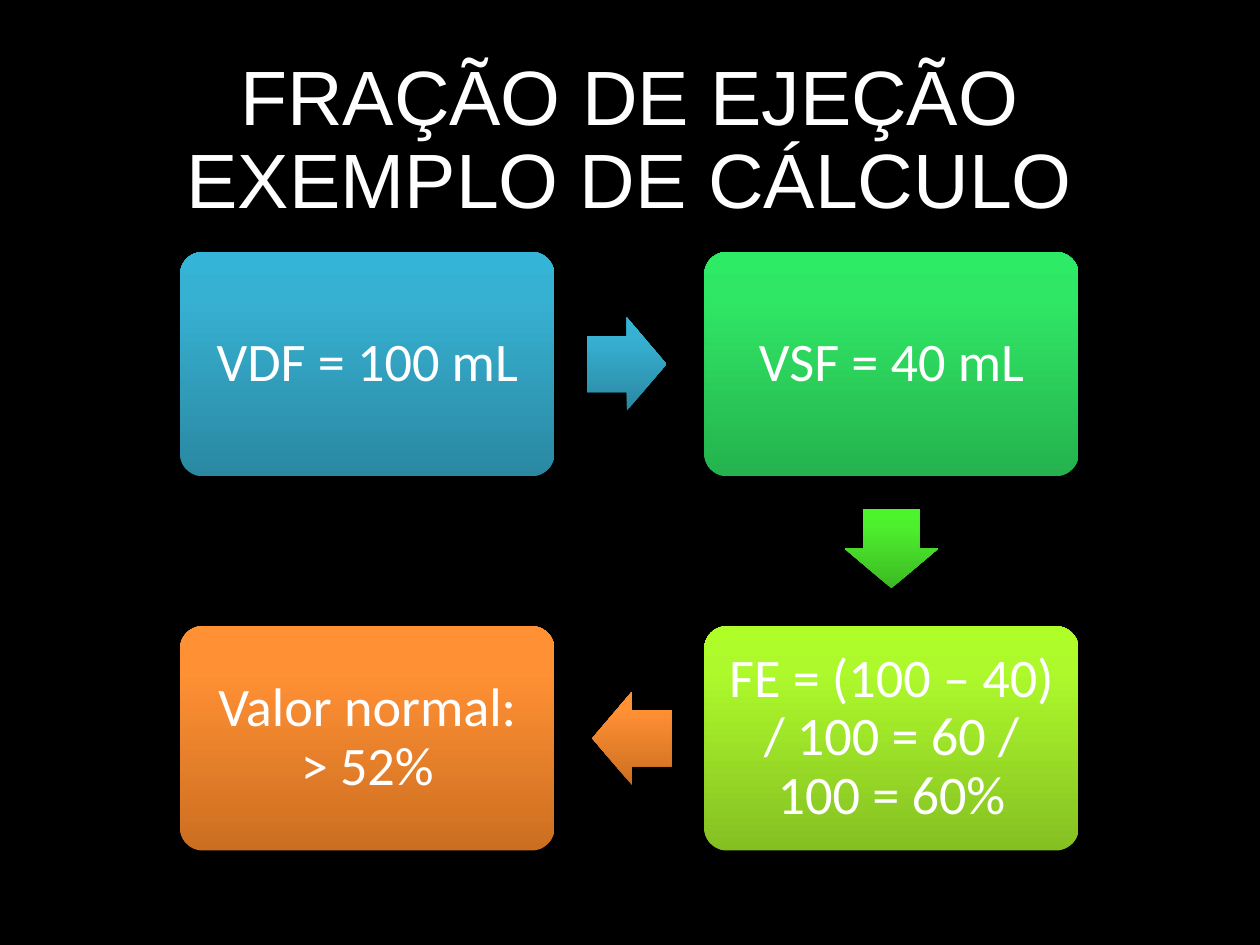
from lxml import etree
from pptx import Presentation
from pptx.dml.color import RGBColor
from pptx.enum.shapes import MSO_SHAPE
from pptx.enum.text import MSO_ANCHOR, PP_ALIGN
from pptx.oxml import parse_xml
from pptx.oxml.ns import nsdecls
from pptx.util import Inches, Pt

ROUNDED, ARROW = MSO_SHAPE.ROUNDED_RECTANGLE, MSO_SHAPE.RIGHT_ARROW
MIDDLE, CENTER = MSO_ANCHOR.MIDDLE, PP_ALIGN.CENTER

TITLE = "FRAÇÃO DE EJEÇÃO\nEXEMPLO DE CÁLCULO"
# text, (column, row), colour name
STEPS = [
    ("VDF = 100 mL", (0, 0), "blue"),
    ("VSF = 40 mL", (1, 0), "green"),
    ("FE = (100 – 40) / 100 = 60 / 100 = 60%", (1, 1), "yellow"),
    ("Valor normal: > 52%", (0, 1), "orange"),
]
# rotation and colour name of the arrow after each step but the last
ARROWS = [(0, "blue"), (90, "lime"), (180, "orange")]

THEME = {
    "background": "000000", "text": "FFFFFF",
    "title_font": "Arial", "title_size": 44,
    "step_font": "Calibri", "step_size": 31,
    # gradient from bottom to top
    "blue": ("2A88A2", "37B1D2", "34B4D6"),
    "green": ("25B24E", "30E765", "2DEB64"),
    "lime": ("3CB923", "4EF02E", "4CF52A"),
    "yellow": ("85C022", "ADF92C", "AFFE28"),
    "orange": ("CC6E20", "FF9034", "FF9136"),
}
STOPS = (0, 80, 100)

LEFT, TOP = 1.43, 2
BOX_W, BOX_H = 2.97, 1.78
PITCH_X, PITCH_Y = 4.16, 2.97
ARROW_W, ARROW_H = 0.63, 0.74
ARROW_LAG = 0.02  # arrows sit slightly nearer to the step they leave


def set_text(sp, text, font, size, inset=0.1):
    tf = sp.text_frame
    tf.word_wrap = True
    tf.vertical_anchor = MIDDLE
    tf.margin_left = tf.margin_right = Inches(inset)
    tf.margin_top = tf.margin_bottom = Inches(inset)
    p = tf.paragraphs[0]
    p.text = text
    p.alignment = CENTER
    p.line_spacing = 0.9
    for r in p.runs:
        r.font.name = font
        r.font.size = Pt(size)
        r.font.color.rgb = RGBColor.from_string(THEME["text"])


def set_gradient(sp, colors):
    """Fill from bottom to top, keeping the direction when the shape is rotated."""
    stops = "".join(
        f'<a:gs pos="{pos * 1000}"><a:srgbClr val="{color}"/></a:gs>'
        for pos, color in zip(STOPS, colors))
    grad = parse_xml(
        f'<a:gradFill {nsdecls("a")} rotWithShape="0"><a:gsLst>{stops}</a:gsLst>'
        '<a:lin ang="16200000" scaled="0"/></a:gradFill>')
    sp.fill.background()
    old = sp._element.spPr.find(etree.QName(grad).text.replace("gradFill", "noFill"))
    old.getparent().replace(old, grad)


def add_block(slide, kind, center, size, colors, adjustments):
    (x, y), (w, h) = center, size
    sp = slide.shapes.add_shape(
        kind, Inches(x - w / 2), Inches(y - h / 2), Inches(w), Inches(h))
    for i, value in enumerate(adjustments):
        sp.adjustments[i] = value
    set_gradient(sp, colors)
    sp.line.fill.background()
    sp.shadow.inherit = False
    return sp


def step_center(cell):
    col, row = cell
    return LEFT + BOX_W / 2 + col * PITCH_X, TOP + BOX_H / 2 + row * PITCH_Y


def arrow_center(start, end):
    middle = []
    for a, b in zip(start, end):
        direction = (b > a) - (b < a)
        middle.append((a + b) / 2 - direction * ARROW_LAG)
    return middle


def main():
    prs = Presentation()
    prs.slide_width, prs.slide_height = Inches(10), Inches(7.5)
    slide = prs.slides.add_slide(prs.slide_layouts[5])
    fill = slide.background.fill
    fill.solid()
    fill.fore_color.rgb = RGBColor.from_string(THEME["background"])

    title = slide.shapes.title
    title.left, title.top = Inches(0.69), Inches(0.4)
    title.width, title.height = Inches(8.62), Inches(1.45)
    set_text(title, TITLE, THEME["title_font"], THEME["title_size"], inset=0.05)

    centers = [step_center(cell) for _, cell, _ in STEPS]
    for (text, _, color), center in zip(STEPS, centers):
        box = add_block(slide, ROUNDED, center, (BOX_W, BOX_H), THEME[color], [0.1])
        set_text(box, text, THEME["step_font"], THEME["step_size"], inset=0.13)
    for (rotation, color), start, end in zip(ARROWS, centers, centers[1:]):
        arrow = add_block(slide, ARROW, arrow_center(start, end),
                          (ARROW_W, ARROW_H), THEME[color], [0.6, 0.5])
        arrow.rotation = rotation

    prs.save("out.pptx")


if __name__ == "__main__":
    main()
